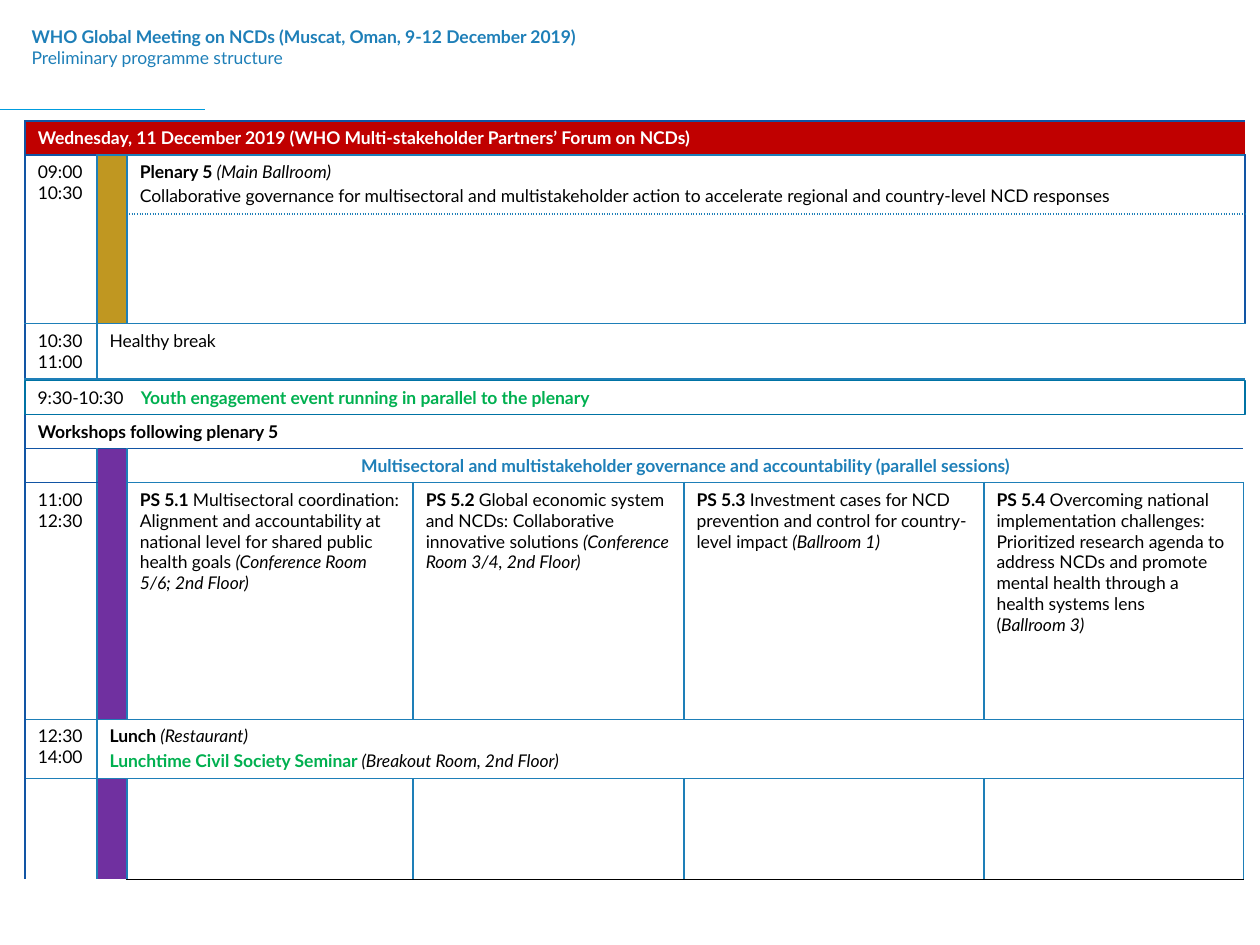
from lxml.etree import SubElement
from pptx import Presentation
from pptx.dml.color import RGBColor
from pptx.enum.shapes import MSO_CONNECTOR, MSO_SHAPE
from pptx.enum.text import MSO_ANCHOR, MSO_AUTO_SIZE, PP_ALIGN
from pptx.oxml.ns import qn
from pptx.util import Inches, Pt

FONT, SIZE = "Lato", 10
BLACK, WHITE, GREEN = "000000", "FFFFFF", "00B050"
BLUE, NAVY = "1E7FB8", "1255A4"
LEFT, WIDTH = 0.2, 9.68


def rgb(value):
    return RGBColor.from_string(value)


def add_runs(p, runs):
    """Add (text, style, colour) runs; style holds "b" and/or "i"."""
    for text, style, *color in runs:
        r = p.add_run()
        r.text = text
        r.font.name, r.font.size = FONT, Pt(SIZE)
        r.font.bold, r.font.italic = "b" in style, "i" in style
        r.font.color.rgb = rgb(color[0] if color else BLACK)


def write(tf, lines, align=PP_ALIGN.LEFT, gap=0):
    for i, runs in enumerate(lines):
        p = tf.add_paragraph() if i else tf.paragraphs[0]
        p.alignment = align
        if i:
            p.space_before = Pt(gap)
        add_runs(p, runs)


def set_border(cell, side, color, dash="solid"):
    tc_pr = cell._tc.get_or_add_tcPr()
    ln = SubElement(tc_pr, qn(f"a:ln{side}"), w=str(Pt(1)))
    if color:
        fill = SubElement(ln, qn("a:solidFill"))
        SubElement(fill, qn("a:srgbClr"), val=color)
        SubElement(ln, qn("a:prstDash"), val=dash)
    else:
        SubElement(ln, qn("a:noFill"))


def add_table(slide, top, widths, heights):
    frame = slide.shapes.add_table(
        len(heights), len(widths), Inches(LEFT), Inches(top),
        Inches(WIDTH), Inches(sum(heights)))
    table = frame.table
    table.first_row = table.horz_banding = False
    for column, width in zip(table.columns, widths):
        column.width = Inches(width)
    for row, height in zip(table.rows, heights):
        row.height = Inches(height)
    for cell in table.iter_cells():
        end = cell.text_frame.paragraphs[0]._p.get_or_add_endParaRPr()
        end.set("sz", str(SIZE * 100))
    return table


def set_cell(table, row, col, lines=(), borders=(NAVY, BLUE, NAVY, BLUE),
             span=(1, 1), fill=WHITE, align=PP_ALIGN.LEFT, gap=2, dotted=""):
    """Fill a cell or merged block; borders run left, right, top, bottom."""
    last_row, last_col = row + span[0] - 1, col + span[1] - 1
    cell = table.cell(row, col)
    if span != (1, 1):
        cell.merge(table.cell(last_row, last_col))
    left, right, top, bottom = borders
    for y in range(row, last_row + 1):
        for x in range(col, last_col + 1):
            part = table.cell(y, x)
            sides = {"L": left if x == col else None,
                     "R": right if x == last_col else None,
                     "T": top if y == row else None,
                     "B": bottom if y == last_row else None}
            for side, color in sides.items():
                set_border(part, side, color,
                           "sysDot" if side in dotted else "solid")
            part.fill.solid()
            part.fill.fore_color.rgb = rgb(fill)
    write(cell.text_frame, lines, align, gap)


def add_heading(slide):
    sp = slide.shapes.title
    sp.left, sp.top, sp.width, sp.height = map(Inches, (0.15, 0.16, 8.05, 0.44))
    tf = sp.text_frame
    tf.auto_size, tf.vertical_anchor = MSO_AUTO_SIZE.NONE, MSO_ANCHOR.TOP
    write(tf, [
        [("WHO Global Meeting on NCDs (Muscat, Oman, 9-12 December 2019)", "b", BLUE)],
        [("Preliminary programme structure", "", BLUE)]])


def add_rule(slide):
    line = slide.shapes.add_connector(
        MSO_CONNECTOR.STRAIGHT, Inches(-0.48), Inches(0.87), Inches(1.63), Inches(0.87))
    line.line.color.rgb, line.line.width = rgb("009CDE"), Pt(0.5)
    SubElement(line._element.spPr, qn("a:effectLst"))


def add_plenary(slide):
    t = add_table(slide, 0.96, (0.57, 0.24, 8.87), (0.27, 0.47, 0.87, 0.44))
    set_cell(t, 0, 0, [[(
        "Wednesday, 11 December 2019 (WHO Multi-stakeholder Partners’ Forum on NCDs)",
        "b", WHITE)]], (NAVY,) * 4, (1, 3), "C00000")
    set_cell(t, 1, 0, [[("09:00 10:30", "")]], span=(2, 1))
    set_cell(t, 1, 1, borders=(BLUE,) * 4, span=(2, 1), fill="C09721")
    set_cell(t, 1, 2, [
        [("Plenary 5 ", "b"), ("(Main Ballroom)", "i")],
        [("Collaborative governance for multisectoral and multistakeholder action "
          "to accelerate regional and country-level NCD responses", "")],
    ], (BLUE, NAVY, BLUE, BLUE), dotted="B")
    set_cell(t, 2, 2, borders=(BLUE, NAVY, BLUE, BLUE), dotted="T")
    set_cell(t, 3, 0, [[("10:30 11:00", "")]], (NAVY, BLUE, BLUE, BLUE))
    set_cell(t, 3, 1, [[("Healthy break", "")]], (BLUE, NAVY, BLUE, BLUE), (1, 2))


def add_workshops(slide):
    sessions = [
        [[("PS 5.1 ", "b"),
          ("Multisectoral coordination: Alignment and accountability at national "
           "level for shared public health goals ", ""),
          ("(Conference Room 5/6; 2nd Floor)", "i")]],
        [[("PS 5.2 ", "b"),
          ("Global economic system and NCDs: Collaborative innovative solutions ", ""),
          ("(Conference Room 3/4, 2nd Floor)", "i")]],
        [[("PS 5.3 ", "b"),
          ("Investment cases for NCD prevention and control for country-level impact ", ""),
          ("(Ballroom 1)", "i")]],
        [[("PS 5.4 ", "b"),
          ("Overcoming national implementation challenges: Prioritized research "
           "agenda to address NCDs and promote mental health through a health "
           "systems lens", "")],
         [("(", ""), ("Ballroom 3)", "i")]],
    ]
    t = add_table(slide, 3.29, (0.57, 0.24, 2.27, 2.15, 2.38, 2.06),
                  (0.27, 0.27, 1.3, 1.5, 0.35))
    set_cell(t, 0, 0, [[("Workshops following plenary 5", "b")]],
             (NAVY, BLACK, NAVY, NAVY), (1, 6))
    set_cell(t, 1, 0, borders=(NAVY, BLUE, NAVY, NAVY))
    set_cell(t, 1, 1, borders=(BLUE, BLUE, NAVY, NAVY), span=(4, 1), fill="7030A0")
    set_cell(t, 1, 2, [[(
        "Multisectoral and multistakeholder governance and accountability "
        "(parallel sessions)", "b", BLUE)]],
        (BLUE, BLACK, NAVY, BLUE), (1, 4), align=PP_ALIGN.CENTER)
    set_cell(t, 2, 0, [[("11:00 12:30", "")]], (NAVY, BLUE, NAVY, NAVY), (3, 1))
    for col, lines in enumerate(sessions, 2):
        set_cell(t, 2, col, lines, (BLUE, BLUE, BLUE, None), gap=0)
        set_cell(t, 3, col, borders=(BLUE, BLUE, None, None))
        set_cell(t, 4, col, borders=(BLUE, BLUE, None, BLACK))


def add_lunch(slide):
    t = add_table(slide, 5.71, (0.57, 9.1), (0.47,))
    set_cell(t, 0, 0, [[("12:30 14:00", "")]], (NAVY, BLUE, BLUE, BLUE))
    set_cell(t, 0, 1, [
        [("Lunch ", "b"), ("(Restaurant)", "i")],
        [("Lunchtime Civil Society Seminar ", "b", GREEN),
         ("(Breakout Room, 2nd Floor)", "i")],
    ], (BLUE, NAVY, BLUE, BLUE))


def add_youth_event(slide):
    sp = slide.shapes.add_shape(MSO_SHAPE.RECTANGLE, Inches(LEFT), Inches(3.02),
                                Inches(WIDTH), Inches(0.27))
    sp.shadow.inherit = False
    sp.fill.background()
    sp.line.color.rgb, sp.line.width = rgb("0073A4"), Pt(1)
    tf = sp.text_frame
    tf.word_wrap, tf.vertical_anchor = True, MSO_ANCHOR.MIDDLE
    tabs = SubElement(tf.paragraphs[0]._p.get_or_add_pPr(), qn("a:tabLst"))
    SubElement(tabs, qn("a:tab"), pos=str(Inches(0.82)), algn="l")
    write(tf, [[("9:30-10:30\t", ""),
                ("Youth engagement event running in parallel to the plenary", "b", GREEN)]])


def main():
    prs = Presentation()
    prs.slide_width, prs.slide_height = Inches(10), Inches(7.5)
    slide = prs.slides.add_slide(prs.slide_layouts[5])
    add_plenary(slide)
    add_heading(slide)
    add_workshops(slide)
    add_lunch(slide)
    add_rule(slide)
    add_youth_event(slide)
    prs.save("out.pptx")


if __name__ == "__main__":
    main()
